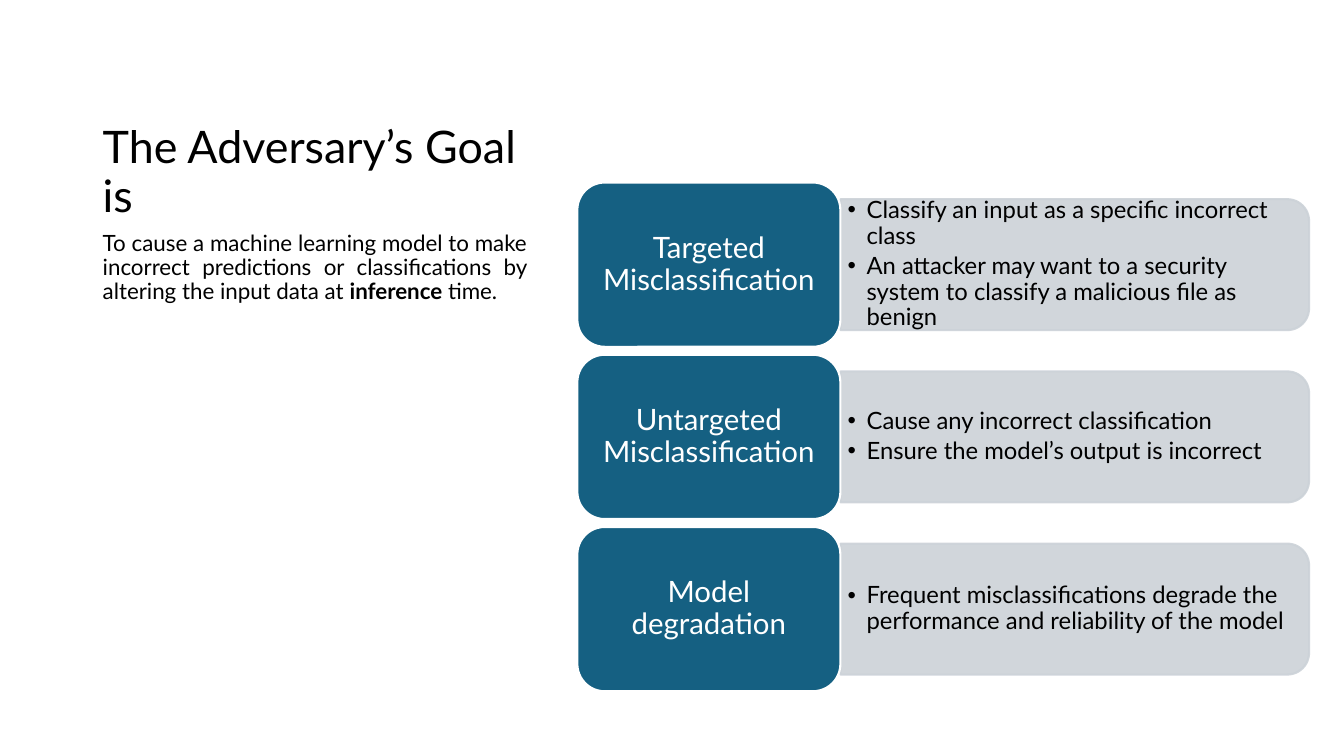
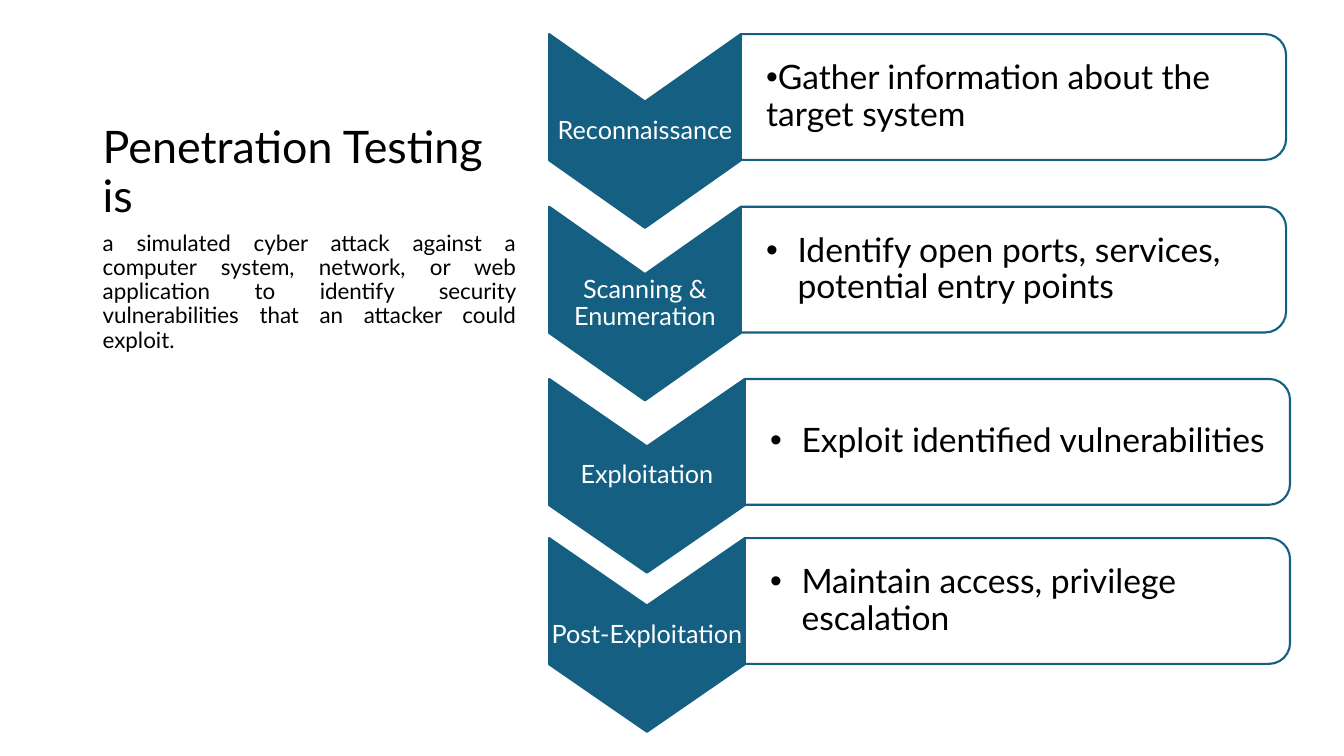
from lxml.etree import SubElement
from pptx import Presentation
from pptx.dml.color import RGBColor
from pptx.enum.shapes import MSO_SHAPE
from pptx.enum.text import MSO_ANCHOR, PP_ALIGN
from pptx.oxml.ns import qn
from pptx.util import Cm, Pt

FONT = "Lato"
BLACK, WHITE, TEAL, GREY = "000000", "FFFFFF", "156082", "CCD2D8"
INTRO_LEFT, TITLE_TOP, TITLE_HEIGHT, BODY_HEIGHT = 2.34, 1.27, 4.45, 10.59

GOALS = [
    ("Targeted Misclassification",
     ["Classify an input as a specific incorrect class",
      "An attacker may want to a security system to classify a malicious file as benign"]),
    ("Untargeted Misclassification",
     ["Cause any incorrect classification",
      "Ensure the model’s output is incorrect"]),
    ("Model degradation",
     ["Frequent misclassifications degrade the performance and reliability of the model"]),
]

# Each phase: top, chevron width, bullet indent, name, description
PHASES = [
    (0.86, 4.83, 0, "Reconnaissance", "Gather information about the target system"),
    (5.21, 4.83, 0.79, "Scanning & Enumeration",
     "Identify open ports, services, potential entry points"),
    (9.55, 4.93, 0.79, "Exploitation", "Exploit identified vulnerabilities"),
    (13.56, 4.93, 0.79, "Post-Exploitation", "Maintain access, privilege escalation"),
]


def color(hex_string):
    return RGBColor.from_string(hex_string)


def paint(shape, fill, line, opacity=100):
    shape.shadow.inherit = False
    shape.line.width = Pt(1.5)
    for fill_format, value in ((shape.fill, fill), (shape.line.fill, line)):
        fill_format.solid()
        fill_format.fore_color.rgb = color(value)
    if opacity < 100:
        for value in shape._element.spPr.iter(qn("a:srgbClr")):
            SubElement(value, qn("a:alpha"), val=str(opacity * 1000))


def add_bullet(paragraph, indent):
    properties = paragraph._p.get_or_add_pPr()
    properties.set("marL", str(Cm(indent)))
    properties.set("indent", str(-Cm(indent)))
    SubElement(properties, qn("a:buFont"), typeface="Arial")
    SubElement(properties, qn("a:buChar"), char="•")


def write(shape, paragraphs, size, text_color=BLACK, align=PP_ALIGN.LEFT,
          anchor=MSO_ANCHOR.MIDDLE, margins=(0.25, 0.13, 0.25, 0.13),
          space_after=0, bullet_indent=None):
    """Fill a shape with paragraphs; text between asterisks is bold."""
    frame = shape.text_frame
    frame.word_wrap = True
    frame.vertical_anchor = anchor
    (frame.margin_left, frame.margin_top,
     frame.margin_right, frame.margin_bottom) = map(Cm, margins)
    frame.text = "\n".join(paragraphs)
    for paragraph, text in zip(frame.paragraphs, paragraphs):
        first, *others = text.split("*")
        paragraph.text = first
        for piece in others:
            paragraph.add_run().text = piece
        paragraph.alignment = align
        paragraph.line_spacing = 0.9
        paragraph.space_after = Pt(space_after)
        if bullet_indent is not None:
            add_bullet(paragraph, bullet_indent)
        for index, run in enumerate(paragraph.runs):
            run.font.name = FONT
            run.font.size = Pt(size)
            run.font.bold = index % 2 == 1
            run.font.color.rgb = color(text_color)


def add_text(slide, left, top, width, height, paragraphs, size, **style):
    box = slide.shapes.add_textbox(Cm(left), Cm(top), Cm(width), Cm(height))
    write(box, paragraphs, size, **style)


def add_intro(slide, width, title, body):
    add_text(slide, INTRO_LEFT, TITLE_TOP, width, TITLE_HEIGHT, [title], 32,
             anchor=MSO_ANCHOR.BOTTOM)
    add_text(slide, INTRO_LEFT, TITLE_TOP + TITLE_HEIGHT, width, BODY_HEIGHT, [body], 16,
             align=PP_ALIGN.JUSTIFY, anchor=MSO_ANCHOR.TOP)


def add_panel(slide, left, top, width, height, fill, line, opacity,
              paragraphs, size, **style):
    """Add a bulleted panel whose right-hand corners are rounded."""
    shift = (width - height) / 2
    panel = slide.shapes.add_shape(MSO_SHAPE.ROUND_2_SAME_RECTANGLE, Cm(left + shift),
                                   Cm(top - shift), Cm(height), Cm(width))
    panel.rotation = 90
    paint(panel, fill, line, opacity)
    add_text(slide, left, top, width, height, paragraphs, size, space_after=3, **style)


def add_goal(slide, left, top, width, height, name, details):
    label_width, panel_height = 6.63, 3.3
    add_panel(slide, left + label_width, top + (height - panel_height) / 2,
              width - label_width, panel_height, GREY, GREY, 90, details, 17,
              margins=(0.18, 0.1, 0.35, 0.1), bullet_indent=0.48)
    label = slide.shapes.add_shape(MSO_SHAPE.ROUNDED_RECTANGLE, Cm(left), Cm(top),
                                   Cm(label_width), Cm(height))
    paint(label, TEAL, WHITE)
    write(label, [name], 21, text_color=WHITE, align=PP_ALIGN.CENTER,
          margins=(0.43, 0.3, 0.43, 0.3), space_after=7)


def add_chevron(slide, left, top, width, height, name):
    """Add a downward chevron with its name in the middle."""
    notch = 1.7
    middle, right, bottom = left + width / 2, left + width, top + height
    outline = [(right, top), (right, bottom - notch), (middle, bottom),
               (left, bottom - notch), (left, top), (middle, top + notch)]
    points = [(Cm(x), Cm(y)) for x, y in outline]
    builder = slide.shapes.build_freeform(*points[0], scale=1.0)
    builder.add_line_segments(points[1:], close=True)
    chevron = builder.convert_to_shape()
    paint(chevron, TEAL, TEAL)
    write(chevron, [name], 18, text_color=WHITE, align=PP_ALIGN.CENTER,
          margins=(0.03, notch, 0.03, notch), space_after=6)


def add_phase(slide, left, top, chevron_width, bullet_indent, name, description):
    add_chevron(slide, left, top, chevron_width, 4.88, name)
    add_panel(slide, left + chevron_width, top, 13.74, 3.17, WHITE, TEAL, 100,
              [description], 24, margins=(0.64, 0.2, 0.2, 0.2),
              bullet_indent=bullet_indent)


def build_goal_slide(slide):
    add_intro(slide, 11.2, "The Adversary’s Goal is",
              "To cause a machine learning model to make incorrect predictions or "
              "classifications by altering the input data at *inference* time.")
    for index, (name, details) in enumerate(GOALS):
        add_goal(slide, 14.55, 4.6 + index * 4.34, 18.44, 4.14, name, details)


def build_testing_slide(slide):
    add_intro(slide, 10.92, "Penetration Testing is",
              "a simulated cyber attack against a computer system, network, or web "
              "application to identify security vulnerabilities that an attacker "
              "could exploit.")
    for phase in PHASES:
        add_phase(slide, 13.84, *phase)


def main():
    presentation = Presentation()
    presentation.slide_width, presentation.slide_height = Cm(33.87), Cm(19.05)
    blank_layout = presentation.slide_layouts[6]
    for build in (build_goal_slide, build_testing_slide):
        build(presentation.slides.add_slide(blank_layout))
    presentation.save("out.pptx")


if __name__ == "__main__":
    main()
